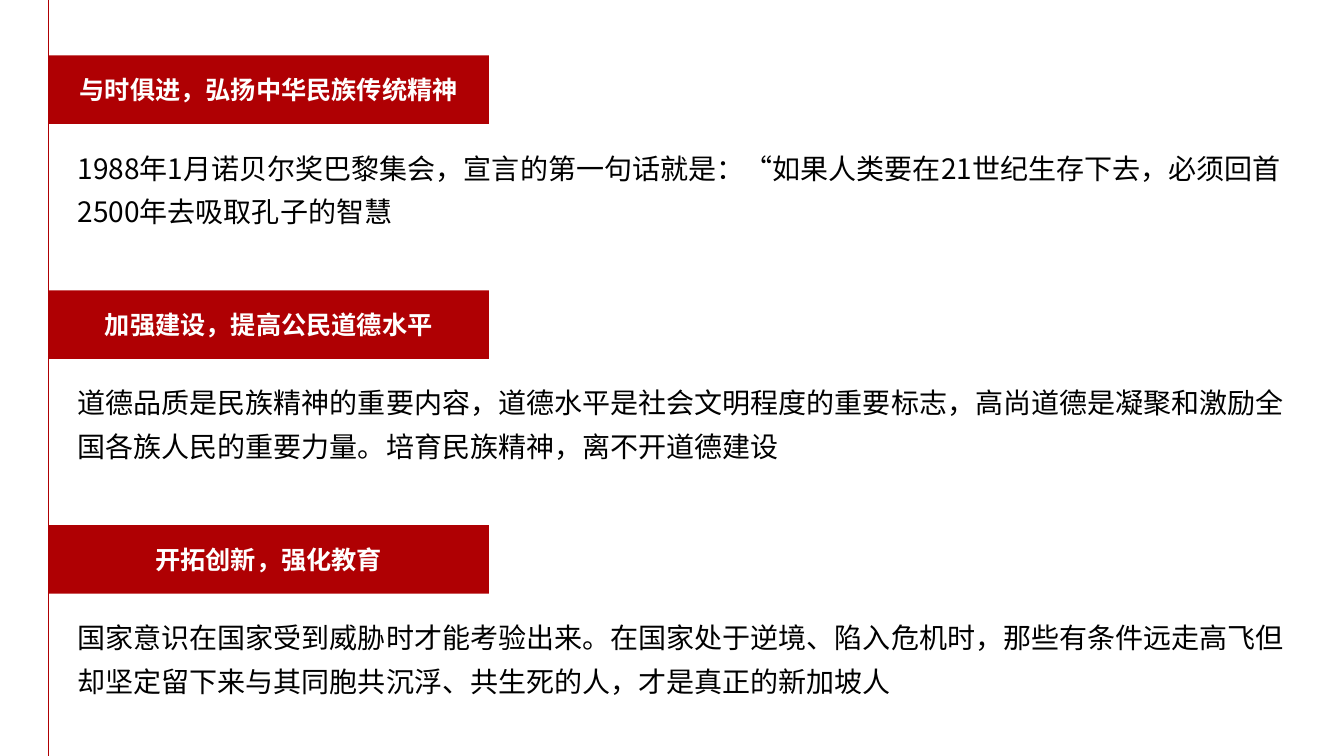
from lxml.etree import SubElement
from pptx import Presentation
from pptx.dml.color import RGBColor
from pptx.enum.shapes import MSO_CONNECTOR, MSO_SHAPE
from pptx.enum.text import MSO_ANCHOR, MSO_AUTO_SIZE, PP_ALIGN
from pptx.oxml.ns import qn
from pptx.util import Inches, Pt

RED = RGBColor(0xAF, 0x00, 0x03)
WHITE = RGBColor(0xFF, 0xFF, 0xFF)
BLACK = RGBColor(0x00, 0x00, 0x00)
FONT = "Noto Sans CJK SC"
PAGE_WIDTH, PAGE_HEIGHT = Inches(13.33), Inches(7.5)
RULE_LEFT = Inches(0.48)
FIRST_TOP, SECTION_PITCH = Inches(0.55), Inches(2.33)
SECTION_WIDTH = Inches(12.37)

SECTIONS = [
    ("与时俱进，弘扬中华民族传统精神",
     "1988年1月诺贝尔奖巴黎集会，宣言的第一句话就是：“如果人类要在21世纪生存下去，"
     "必须回首2500年去吸取孔子的智慧"),
    ("加强建设，提高公民道德水平",
     "道德品质是民族精神的重要内容，道德水平是社会文明程度的重要标志，"
     "高尚道德是凝聚和激励全国各族人民的重要力量。培育民族精神，离不开道德建设"),
    ("开拓创新，强化教育",
     "国家意识在国家受到威胁时才能考验出来。在国家处于逆境、陷入危机时，"
     "那些有条件远走高飞但却坚定留下来与其同胞共沉浮、共生死的人，才是真正的新加坡人"),
]


def write_text(frame, text, size, color, bold=False):
    """Fill a text frame with one styled paragraph and return it."""
    frame.word_wrap = True
    para = frame.paragraphs[0]
    para.text = text
    para.font.size = Pt(size)
    para.font.bold = bold
    para.font.color.rgb = color
    para.font.name = FONT
    defaults = para._p.pPr.find(qn("a:defRPr"))
    SubElement(defaults, qn("a:ea")).set("typeface", FONT)
    return para


def add_rule(page, left, top, height):
    """Draw the thin vertical rule that the headings hang from."""
    rule = page.shapes.add_connector(
        MSO_CONNECTOR.STRAIGHT, left, top, left, top + height)
    rule.line.color.rgb = RED
    rule.line.width = Pt(0.5)
    SubElement(rule._element.spPr, qn("a:effectLst"))


def add_section(page, left, top, width, heading, body):
    """Place a red heading bar with its body text below as one group."""
    group = page.shapes.add_group_shape()
    bar = group.shapes.add_shape(
        MSO_SHAPE.RECTANGLE, left, top, Inches(4.37), Inches(0.68))
    bar.shadow.inherit = False
    bar.fill.solid()
    bar.fill.fore_color.rgb = RED
    bar.line.fill.background()
    bar.text_frame.vertical_anchor = MSO_ANCHOR.MIDDLE
    write_text(bar.text_frame, heading, 18, WHITE, True).alignment = PP_ALIGN.CENTER

    indent = Inches(0.19)
    box = group.shapes.add_textbox(
        left + indent, top + Inches(0.8), width - indent, Inches(0.93))
    write_text(box.text_frame, body, 20, BLACK).line_spacing = 1.3
    box.text_frame.auto_size = MSO_AUTO_SIZE.SHAPE_TO_FIT_TEXT


def main():
    """Build the slide and save the deck."""
    deck = Presentation()
    deck.slide_width, deck.slide_height = PAGE_WIDTH, PAGE_HEIGHT
    page = deck.slides.add_slide(deck.slide_layouts[6])
    add_rule(page, RULE_LEFT, 0, PAGE_HEIGHT)
    for index, (heading, body) in enumerate(SECTIONS):
        top = FIRST_TOP + index * SECTION_PITCH
        add_section(page, RULE_LEFT, top, SECTION_WIDTH, heading, body)
    deck.save("out.pptx")


if __name__ == "__main__":
    main()
